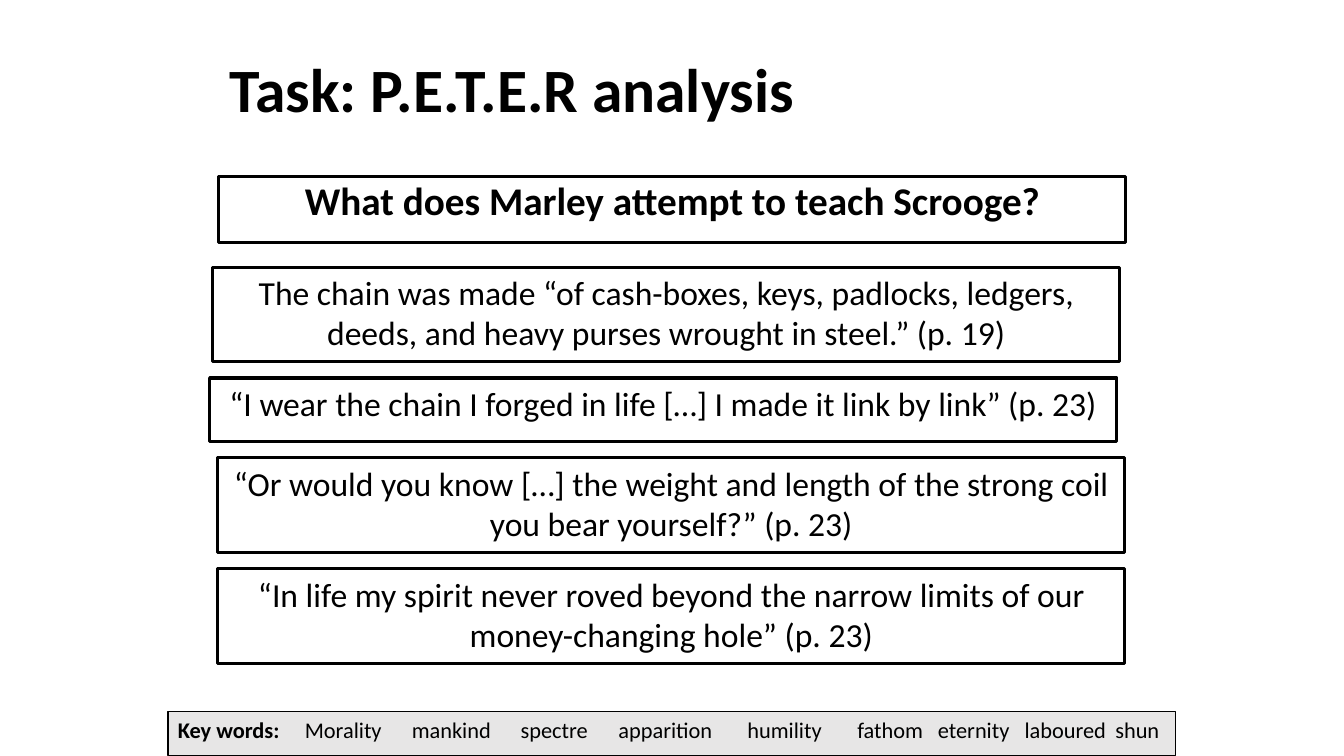
from lxml import etree
from pptx import Presentation
from pptx.dml.color import RGBColor
from pptx.enum.shapes import MSO_SHAPE
from pptx.enum.text import MSO_ANCHOR, PP_ALIGN
from pptx.oxml.ns import qn
from pptx.util import Emu, Inches, Pt

RECTANGLE = MSO_SHAPE.RECTANGLE
TOP, MIDDLE = MSO_ANCHOR.TOP, MSO_ANCHOR.MIDDLE
LEFT, CENTER = PP_ALIGN.LEFT, PP_ALIGN.CENTER
BLACK = RGBColor(0x00, 0x00, 0x00)
WHITE = RGBColor(0xFF, 0xFF, 0xFF)
GREY = RGBColor(0xE7, 0xE6, 0xE6)
FONT = "Calibri"

COLUMNS, ROWS = 80, 45
SLIDE_WIDTH, SLIDE_HEIGHT = Inches(13.333), Inches(7.5)
COLUMN, ROW = SLIDE_WIDTH / COLUMNS, SLIDE_HEIGHT / ROWS

QUOTE_GAP = 0.96
ONE_LINE, TWO_LINES = 3.78, 5.64
QUOTES = [
    (12.66, TWO_LINES, "The chain was made “of cash-boxes, keys, padlocks, ledgers, "
     "deeds, and heavy purses wrought in steel.” (p. 19)"),
    (12.48, ONE_LINE, "“I wear the chain I forged in life […] I made it link by link” (p. 23)"),
    (12.96, TWO_LINES, "“Or would you know […] the weight and length of the strong coil "
     "you bear yourself?” (p. 23)"),
    (12.96, TWO_LINES, "“In life my spirit never roved beyond the narrow limits of our "
     "money-changing hole” (p. 23)"),
]
KEY_WORDS = [
    ("Morality", 7.56), ("mankind", 13.92), ("spectre", 20.4),
    ("apparition", 26.22), ("humility", 33.9), ("fathom", 40.44),
    ("eternity", 45.24), ("laboured", 50.4), ("shun", 55.8),
]


def to_lengths(box):
    left, top, width, height = box
    return Emu(int(left * COLUMN)), Emu(int(top * ROW)), Emu(int(width * COLUMN)), Emu(int(height * ROW))


def style_text(shape, size, bold=False, align=LEFT, anchor=TOP, line_spacing=1.0):
    frame = shape.text_frame
    frame.word_wrap = True
    frame.vertical_anchor = anchor
    paragraph = frame.paragraphs[0]
    paragraph.alignment = align
    paragraph.line_spacing = line_spacing
    for run in paragraph.runs:
        run.font.name = FONT
        run.font.size = Pt(size)
        run.font.bold = bold
        run.font.color.rgb = BLACK


def add_frame(slide, box, fill, line_width):
    shape = slide.shapes.add_shape(RECTANGLE, *to_lengths(box))
    shape.shadow.inherit = False
    shape.fill.solid()
    shape.fill.fore_color.rgb = fill
    shape.line.color.rgb = BLACK
    shape.line.width = Pt(line_width)
    return shape


def add_title(slide, box):
    title = slide.shapes.add_textbox(*to_lengths(box))
    title.text_frame.text = "Task: P.E.T.E.R analysis"
    style_text(title, 44, bold=True, anchor=MIDDLE, line_spacing=0.9)


def add_question(slide, box):
    question = add_frame(slide, box, WHITE, 2.25)
    question.text_frame.text = "What does Marley attempt to teach Scrooge?"
    style_text(question, 28, bold=True, align=CENTER, line_spacing=0.9)


def add_quotes(slide, top, width):
    for left, height, text in QUOTES:
        quote = add_frame(slide, (left, top, width, height), WHITE, 2.25)
        quote.text_frame.text = text
        style_text(quote, 24, align=CENTER)
        top += height + QUOTE_GAP


def add_key_words(slide, box):
    bar = add_frame(slide, box, GREY, 0.75)
    paragraph = bar.text_frame.paragraphs[0]
    tab_list = etree.SubElement(paragraph._p.get_or_add_pPr(), qn("a:tabLst"))
    for _, position in KEY_WORDS:
        etree.SubElement(tab_list, qn("a:tab"), pos=str(int(position * COLUMN)), algn="l")
    label = paragraph.add_run()
    label.text = "Key words:"
    words = paragraph.add_run()
    words.text = "".join("\t" + word for word, _ in KEY_WORDS)
    style_text(bar, 16)
    label.font.bold = True


def main():
    presentation = Presentation()
    presentation.slide_width = SLIDE_WIDTH
    presentation.slide_height = SLIDE_HEIGHT
    slide = presentation.slides.add_slide(presentation.slide_layouts[6])
    add_title(slide, (13.08, 1.74, 50, 7.5))
    add_question(slide, (13.02, 10.5, 54, 3.96))
    add_quotes(slide, top=15.9, width=54)
    add_key_words(slide, (10, 42.36, 60, 2.64))
    presentation.save("out.pptx")


if __name__ == "__main__":
    main()
